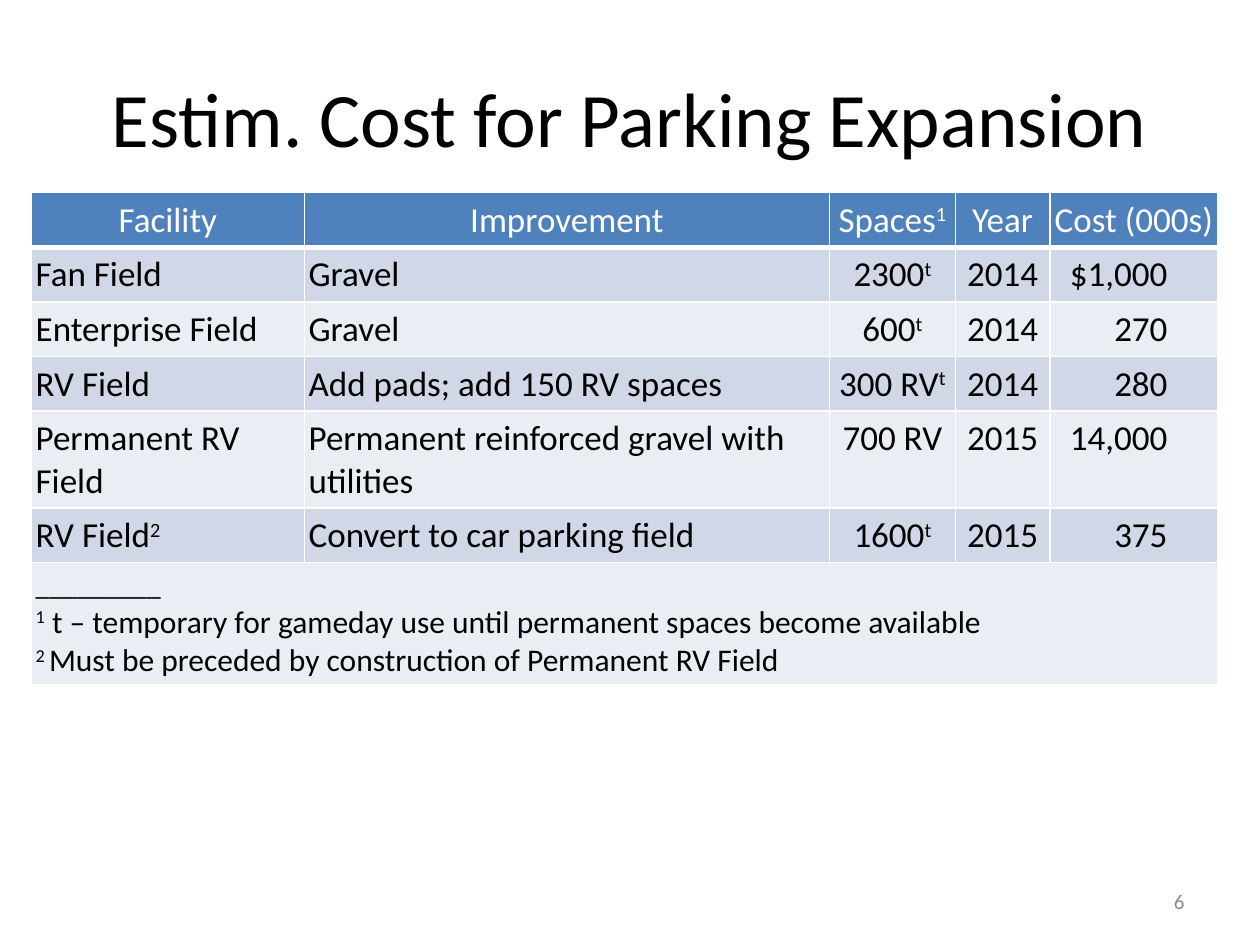
from lxml import etree
from pptx import Presentation
from pptx.dml.color import RGBColor
from pptx.enum import text
from pptx.oxml.ns import qn
from pptx.util import Pt

COLORS = {"black": "000000", "white": "FFFFFF", "number": "8C8C8C",
          "header": "4F81BD", "odd": "D0D8E8", "even": "E9EDF4"}
LEFT, CENTER, RIGHT = (text.PP_ALIGN.LEFT, text.PP_ALIGN.CENTER,
                       text.PP_ALIGN.RIGHT)

COL_WIDTHS = [156, 300, 72, 54, 96]
ROW_HEIGHT = 29.5
COL_ALIGNS = [LEFT, LEFT, CENTER, CENTER, RIGHT]
HEADER = ["Facility", "Improvement", "Spaces^1", "Year", "Cost (000s)"]
FACILITIES = [
    ["Fan Field", "Gravel", "2300^t", "2014", "$1,000"],
    ["Enterprise Field", "Gravel", "600^t", "2014", "270"],
    ["RV Field", "Add pads; add 150 RV spaces", "300 RV^t", "2014", "280"],
    ["Permanent RV Field", "Permanent reinforced gravel with utilities",
     "700 RV", "2015", "14,000"],
    ["RV Field^2", "Convert to car parking field", "1600^t", "2015", "375"],
]
FOOTNOTES = [
    ("_________", 16),
    ("^1^ t – temporary for gameday use until permanent spaces become available", 18),
    ("^2 ^Must be preceded by construction of Permanent RV Field", 18),
]


def write(p, content, size, color, align):
    """Fill a paragraph; each ^ switches superscript on or off."""
    p.alignment = align
    for i, part in enumerate(content.split("^")):
        if not part:
            continue
        r = p.add_run()
        r.text = part
        r.font.name = "Calibri"
        r.font.size = Pt(size)
        r.font.color.rgb = RGBColor.from_string(COLORS[color])
        if i % 2:
            r.font._element.set("baseline", "30000")


def add_text(s, box, content, size, color, align):
    tf = s.shapes.add_textbox(*map(Pt, box)).text_frame
    tf.word_wrap = True
    tf.vertical_anchor = text.MSO_ANCHOR.MIDDLE
    write(tf.paragraphs[0], content, size, color, align)


def style_cell(cell, fill, right=2.4, bottom_line=1):
    cell.margin_left, cell.margin_right = Pt(2.4), Pt(right)
    cell.margin_top = cell.margin_bottom = Pt(3.6)
    tc_pr = cell._tc.get_or_add_tcPr()
    for side, width in (("L", 1), ("R", 1), ("T", 1), ("B", bottom_line)):
        ln = etree.SubElement(tc_pr, qn(f"a:ln{side}"), w=str(Pt(width)))
        line_fill = etree.SubElement(ln, qn("a:solidFill"))
        etree.SubElement(line_fill, qn("a:srgbClr"), val=COLORS["white"])
    cell.fill.solid()
    cell.fill.fore_color.rgb = RGBColor.from_string(COLORS[fill])


def add_cost_table(s, left, top):
    n_rows = len(FACILITIES) + 2
    table = s.shapes.add_table(n_rows, len(COL_WIDTHS), Pt(left), Pt(top),
                               Pt(sum(COL_WIDTHS)), Pt(n_rows * ROW_HEIGHT)).table
    for col, width in zip(table.columns, COL_WIDTHS):
        col.width = Pt(width)
    for row in table.rows:
        row.height = Pt(ROW_HEIGHT)

    for c, label in enumerate(HEADER):
        cell = table.cell(0, c)
        style_cell(cell, "header", bottom_line=3)
        write(cell.text_frame.paragraphs[0], label, 20, "white", CENTER)
    for r, facility in enumerate(FACILITIES, 1):
        for c, (value, align) in enumerate(zip(facility, COL_ALIGNS)):
            cell = table.cell(r, c)
            style_cell(cell, "odd" if r % 2 else "even",
                       right=28.8 if align == RIGHT else 2.4)
            write(cell.text_frame.paragraphs[0], value, 20, "black", align)

    notes = table.cell(n_rows - 1, 0)
    notes.merge(table.cell(n_rows - 1, len(COL_WIDTHS) - 1))
    style_cell(notes, "even")
    tf = notes.text_frame
    for i, (note, size) in enumerate(FOOTNOTES):
        p = tf.add_paragraph() if i else tf.paragraphs[0]
        write(p, note, size, "black", LEFT)


def main():
    prs = Presentation()
    prs.slide_width, prs.slide_height = Pt(720), Pt(540)
    s = prs.slides.add_slide(prs.slide_layouts[6])
    add_text(s, (36, 21.6, 648, 90), "Estim. Cost for Parking Expansion",
             44, "black", CENTER)
    add_text(s, (516, 500.5, 168, 28.75), "6", 12, "number", RIGHT)
    add_cost_table(s, 18, 110)
    prs.save("out.pptx")


if __name__ == "__main__":
    main()
